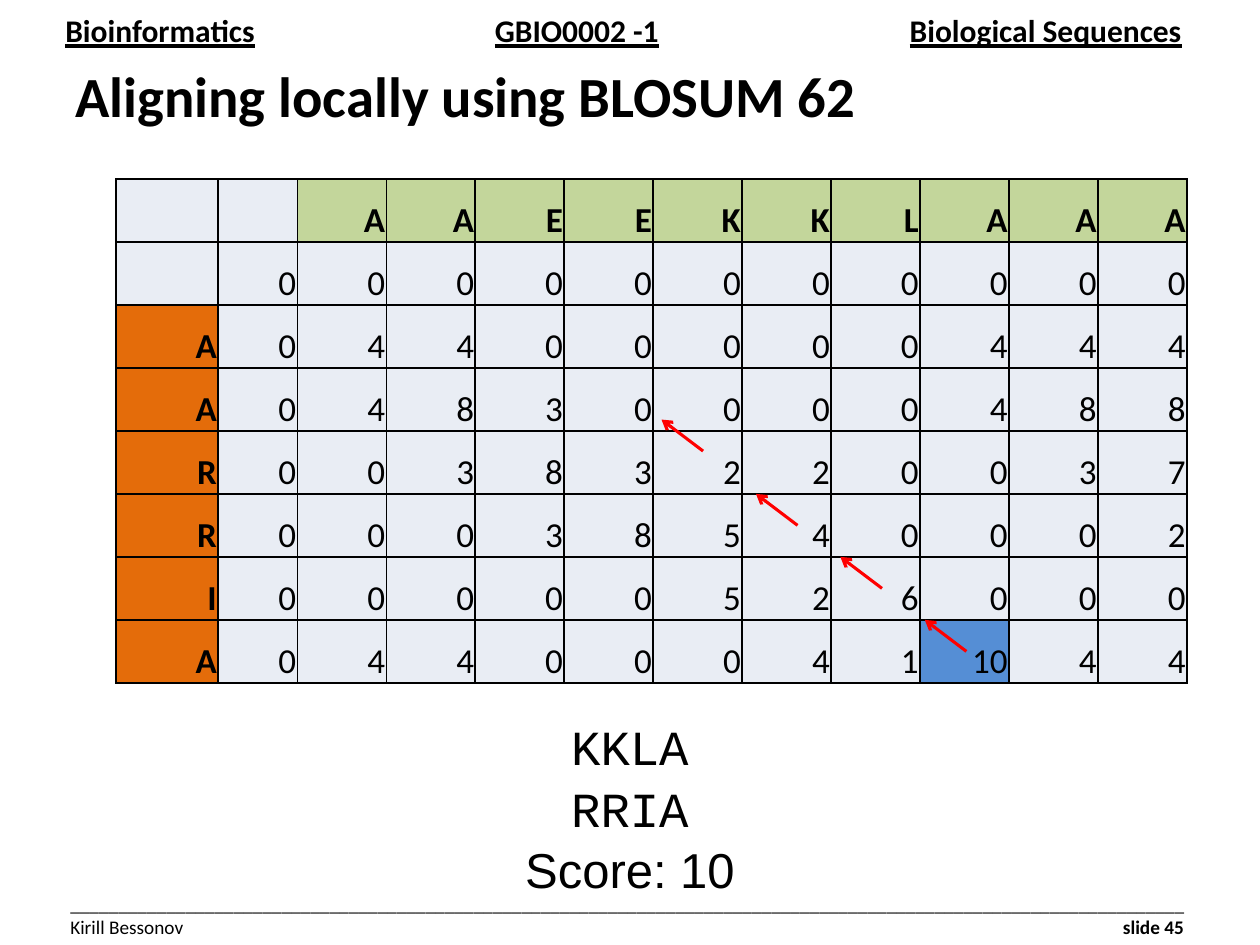
"""Build a slide showing a local sequence alignment scored with BLOSUM 62."""
from dataclasses import dataclass

from lxml import etree
from pptx import Presentation
from pptx.dml.color import RGBColor
from pptx.enum.shapes import MSO_CONNECTOR
from pptx.enum.text import MSO_ANCHOR, PP_ALIGN
from pptx.oxml.ns import qn
from pptx.util import Inches, Pt

STRAIGHT = MSO_CONNECTOR.STRAIGHT
TOP, MIDDLE, BOTTOM = MSO_ANCHOR.TOP, MSO_ANCHOR.MIDDLE, MSO_ANCHOR.BOTTOM
LEFT, CENTER, RIGHT = PP_ALIGN.LEFT, PP_ALIGN.CENTER, PP_ALIGN.RIGHT


@dataclass(frozen=True)
class Theme:
    """Colours, fonts and type sizes of the slide."""
    ink: str = "000000"
    cell: str = "E9EDF4"
    column_letter: str = "C3D69B"
    row_letter: str = "E46C0A"
    best_score: str = "558ED5"
    trace: str = "FF0000"
    font: str = "Calibri"
    sequence_font: str = "Courier New"
    score_font: str = "Arial"
    header_size: float = 18
    footer_size: float = 11
    title_size: float = 32.4
    result_size: float = 28
    cell_size: float = 20


class AlignmentSlide:
    """Hold the theme and the slide, and add elements to it."""

    def __init__(self, slide, theme):
        self.slide = slide
        self.theme = theme

    def style(self, run, size, font=None, bold=False, underline=False):
        """Format one run."""
        run.font.name = font or self.theme.font
        run.font.size = Pt(size)
        run.font.bold = bold
        run.font.underline = underline
        run.font.color.rgb = RGBColor.from_string(self.theme.ink)

    def text(self, box, lines, size, fonts=None, align=LEFT, anchor=TOP, **look):
        """Add a text box with one paragraph per line and return its frame."""
        frame = self.slide.shapes.add_textbox(*map(Inches, box)).text_frame
        frame.word_wrap = True
        frame.vertical_anchor = anchor
        frame.text = "\n".join(lines)
        for paragraph, font in zip(frame.paragraphs, fonts or [None] * len(lines)):
            paragraph.alignment = align
            for run in paragraph.runs:
                self.style(run, size, font, **look)
        return frame

    def tabs(self, paragraph, stops):
        """Set tab stops given as (inches, alignment) pairs."""
        tab_list = etree.SubElement(paragraph._p.get_or_add_pPr(), qn("a:tabLst"))
        for position, align in stops:
            etree.SubElement(tab_list, qn("a:tab"), pos=str(Inches(position)), algn=align)

    def border(self, cell):
        """Draw thin lines on all four sides of a cell."""
        properties = cell._tc.get_or_add_tcPr()
        for index, side in enumerate(("a:lnL", "a:lnR", "a:lnT", "a:lnB")):
            line = etree.Element(qn(side), w=str(Pt(1)))
            fill = etree.SubElement(line, qn("a:solidFill"))
            etree.SubElement(fill, qn("a:srgbClr"), val=self.theme.ink)
            properties.insert(index, line)

    def cell(self, cell, value, fill, bold):
        """Fill in one cell of the score matrix."""
        cell.margin_left = cell.margin_right = cell.margin_top = Inches(0.01)
        cell.margin_bottom = 0
        cell.vertical_anchor = BOTTOM
        cell.fill.solid()
        cell.fill.fore_color.rgb = RGBColor.from_string(fill)
        self.border(cell)
        cell.text = value
        paragraph = cell.text_frame.paragraphs[0]
        paragraph.alignment = RIGHT
        for run in paragraph.runs:
            self.style(run, self.theme.cell_size, bold=bold)

    def matrix(self, box, across, down, scores, best, lead_widths):
        """Add the score matrix with a sequence along each axis."""
        rows = [["", "", *across]]
        rows += [[letter, *line.split()] for letter, line in zip(["", *down], scores)]
        columns = len(rows[0])
        table = self.slide.shapes.add_table(len(rows), columns, *map(Inches, box)).table
        table.first_row = table.horz_banding = False
        score_width = (box[2] - sum(lead_widths)) / len(across)
        widths = [*lead_widths, *[score_width] * len(across)]
        for column, width in zip(table.columns, widths):
            column.width = Inches(width)
        for r, row in enumerate(rows):
            for c, value in enumerate(row):
                fill = self.theme.cell
                if r == 0 and value:
                    fill = self.theme.column_letter
                elif c == 0 and value:
                    fill = self.theme.row_letter
                elif (r, c) == best:
                    fill = self.theme.best_score
                self.cell(table.cell(r, c), value, fill, bold=r == 0 or c == 0)

    def arrow(self, x, y, dx, dy):
        """Add a traceback arrow from a point along an offset."""
        ends = map(Inches, (x, y, x + dx, y + dy))
        connector = self.slide.shapes.add_connector(STRAIGHT, *ends)
        connector.line.color.rgb = RGBColor.from_string(self.theme.trace)
        connector.line.width = Pt(1.75)
        etree.SubElement(connector.line._get_or_add_ln(), qn("a:tailEnd"), type="arrow")
        etree.SubElement(connector._element.spPr, qn("a:effectLst"))


def main():
    """Build and save the slide."""
    theme = Theme()
    deck = Presentation()
    deck.slide_width, deck.slide_height = Inches(10), Inches(7.5)
    page = AlignmentSlide(deck.slides.add_slide(deck.slide_layouts[6]), theme)

    header = page.text((0.42, 0.04, 9.42, 0.4),
                       ["Bioinformatics\tGBIO0002 -1\tBiological Sequences"],
                       theme.header_size, bold=True, underline=True)
    page.tabs(header.paragraphs[0], [(4.06, "ctr"), (8.86, "r")])

    footer = page.text((0.46, 7.03, 9.13, 0.47), ["_" * 116, "Kirill Bessonov\t"],
                       theme.footer_size)
    author = footer.paragraphs[1]
    page.tabs(author, [(8.84, "r")])
    slide_number = author.add_run()
    slide_number.text = "slide 45"
    page.style(slide_number, theme.footer_size, bold=True)

    page.text((0.5, 0.42, 9, 0.67), ["Aligning locally using BLOSUM 62"],
              theme.title_size, anchor=MIDDLE, bold=True)

    result = page.text((0.5, 5.58, 9, 1.45), ["KKLA", "RRIA", "Score: 10"],
                       theme.result_size, align=CENTER,
                       fonts=[theme.sequence_font, theme.sequence_font, theme.score_font])
    result.margin_top = Inches(0.11)
    for paragraph in result.paragraphs:
        paragraph.space_before = Pt(1.5)

    scores = [
        "0 0 0 0 0 0 0 0 0 0 0",
        "0 4 4 0 0 0 0 0 4 4 4",
        "0 4 8 3 0 0 0 0 4 8 8",
        "0 0 3 8 3 2 2 0 0 3 7",
        "0 0 0 3 8 5 4 0 0 0 2",
        "0 0 0 0 0 5 2 6 0 0 0",
        "0 4 4 0 0 0 4 1 10 4 4",
    ]
    page.matrix((0.92, 1.42, 8.5, 4), "AAEEKKLAAA", "AARRIA", scores,
                best=(7, 9), lead_widths=(0.81, 0.63))

    for x, y in [(7.67, 5.17), (7, 4.67), (6.33, 4.17), (5.58, 3.58)]:
        page.arrow(x, y, -0.33, -0.25)

    deck.save("out.pptx")


if __name__ == "__main__":
    main()
